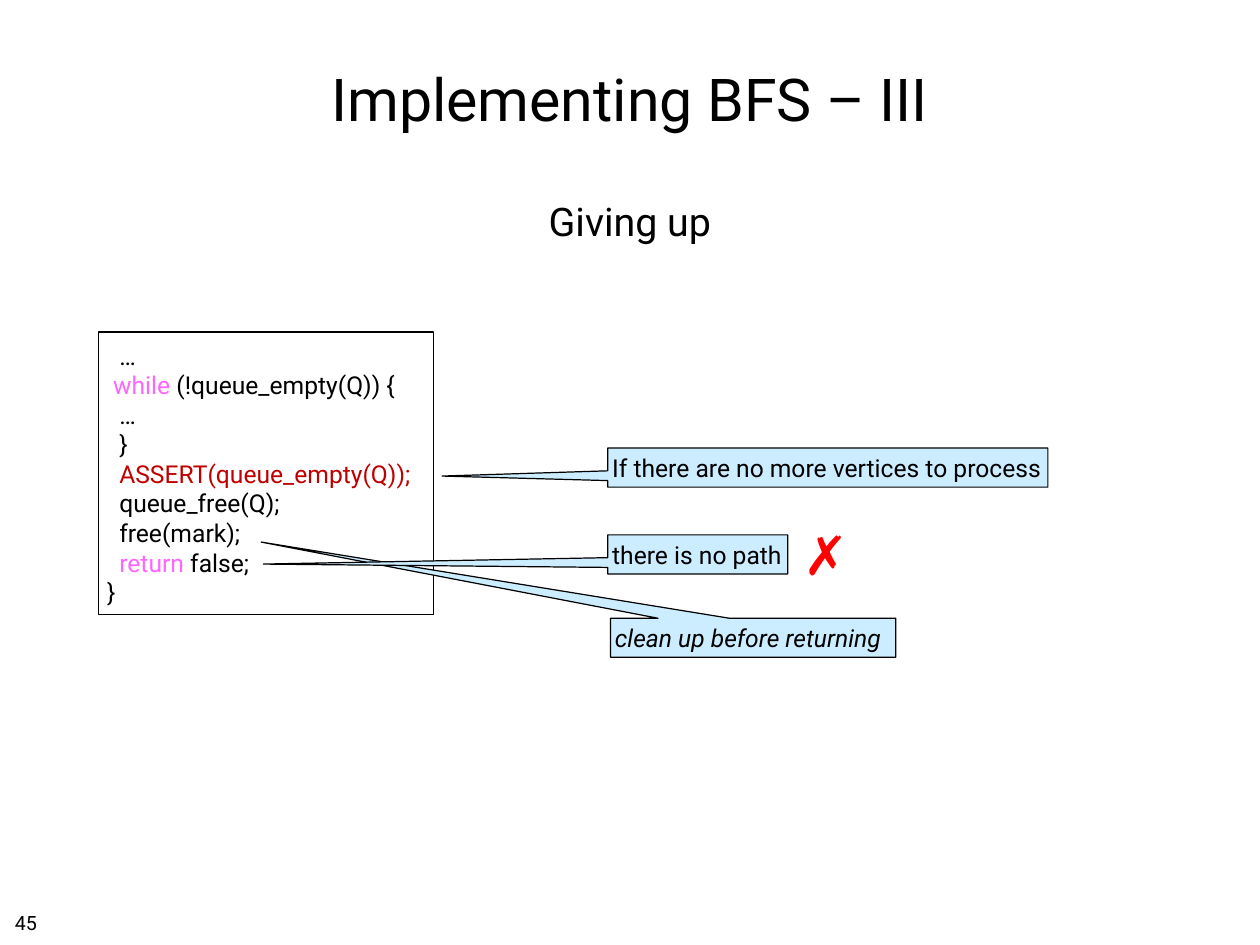
from pptx import Presentation
from pptx.dml.color import RGBColor
from pptx.enum import shapes, text
from pptx.util import Cm, Pt

FONT = "Roboto"
BLACK = RGBColor(0x00, 0x00, 0x00)
PINK = RGBColor(0xFF, 0x66, 0xFF)
DARK_RED = RGBColor(0xC0, 0x00, 0x00)
RED = RGBColor(0xFF, 0x00, 0x00)
PALE_BLUE = RGBColor(0xCC, 0xEC, 0xFF)

LEFT, CENTER = text.PP_ALIGN.LEFT, text.PP_ALIGN.CENTER
TOP, MIDDLE = text.MSO_ANCHOR.TOP, text.MSO_ANCHOR.MIDDLE
SPACE_WIDTH = 0.175  # cm, one code column

# Each line: indent in columns, then (text, colour) pieces
CODE = [
    (2, [("…", BLACK)]),
    (1, [("while", PINK), (" (!queue_empty(Q)) {", BLACK)]),
    (2, [("…", BLACK)]),
    (2, [("}", BLACK)]),
    (2, [("ASSERT(queue_empty(Q));", DARK_RED)]),
    (2, [("queue_free(Q);", BLACK)]),
    (2, [("free(mark);", BLACK)]),
    (2, [("return", PINK), (" false;", BLACK)]),
    (0, [("}", BLACK)]),
]

# Text, (left, top, width) in cm, pointer adjustments, italic
CALLOUTS = [
    ("If there are no more vertices to process", (17.42, 12.85, 12.62), (-0.876, 0.217), False),
    ("clean up before returning", (17.5, 17.73, 8.18), (-1.724, -2.45), True),
    ("there is no path", (17.42, 15.34, 5.16), (-2.413, 0.248), False),
]


def set_frame(tf, insets, anchor=TOP, wrap=True):
    tf.auto_size = text.MSO_AUTO_SIZE.NONE
    tf.word_wrap = wrap
    tf.vertical_anchor = anchor
    tf.margin_left, tf.margin_top, tf.margin_right, tf.margin_bottom = map(Cm, insets)


def set_font(p, size, color=BLACK, align=LEFT, bold=False, italic=False):
    p.alignment = align
    p.font.name = FONT
    p.font.size = Pt(size)
    p.font.color.rgb = color
    p.font.bold = bold
    p.font.italic = italic


def add_outlined(slide, kind, box):
    sp = slide.shapes.add_shape(kind, *map(Cm, box))
    sp.shadow.inherit = False
    sp.fill.background()
    sp.line.color.rgb = BLACK
    sp.line.width = Pt(1)
    return sp


def add_title(slide, title):
    sp = slide.shapes.title
    sp.left, sp.top, sp.width, sp.height = map(Cm, (2.64, 0.71, 30.84, 4.17))
    tf = sp.text_frame
    set_frame(tf, [0.15] * 4, MIDDLE)
    tf.text = title
    set_font(tf.paragraphs[0], 48, align=CENTER)


def add_label(slide, label, box, size, insets, wrap=True, **font):
    tf = slide.shapes.add_textbox(*map(Cm, box)).text_frame
    set_frame(tf, insets, wrap=wrap)
    tf.text = label
    set_font(tf.paragraphs[0], size, **font)


def add_code(slide, lines, box):
    sp = add_outlined(slide, shapes.MSO_SHAPE.RECTANGLE, box)
    tf = sp.text_frame
    set_frame(tf, (0.25, 0.25, 0.15, 0.15))
    for i, (columns, pieces) in enumerate(lines):
        p = tf.paragraphs[0] if i == 0 else tf.add_paragraph()
        set_font(p, 20)
        p._p.get_or_add_pPr().set("marL", str(Cm(columns * SPACE_WIDTH)))
        for piece, color in pieces:
            r = p.add_run()
            r.text = piece
            r.font.color.rgb = color


def add_callout(slide, label, box, pointer, italic):
    sp = add_outlined(slide, shapes.MSO_SHAPE.RECTANGULAR_CALLOUT, (*box, 1.12))
    sp.fill.solid()
    sp.fill.fore_color.rgb = PALE_BLUE
    sp.adjustments[0], sp.adjustments[1] = pointer
    tf = sp.text_frame
    set_frame(tf, (0.13, 0.13, 0, 0.13), MIDDLE)
    tf.text = label
    set_font(tf.paragraphs[0], 20, italic=italic)


def main():
    prs = Presentation()
    prs.slide_width, prs.slide_height = Cm(36.12), Cm(27.1)
    slide = prs.slides.add_slide(prs.slide_layouts[5])

    # Heading
    add_title(slide, "Implementing BFS – III")
    add_label(slide, "Giving up", (2.64, 5.51, 30.84, 1.7), 32, [0.15] * 4, align=CENTER)

    # Code and its explanations
    add_code(slide, CODE, (2.82, 9.52, 9.6, 8.1))
    for callout in CALLOUTS:
        add_callout(slide, *callout)
    add_label(slide, "✗", (22.94, 14.81, 1.52, 2.13), 44, (0.25, 0.13, 0.25, 0.13),
              wrap=False, color=RED, align=CENTER, bold=True)

    # Page number
    add_label(slide, "45", (0.28, 25.98, 0.94, 0.89), 16, [0.15] * 4, wrap=False)

    prs.save("out.pptx")


if __name__ == "__main__":
    main()
